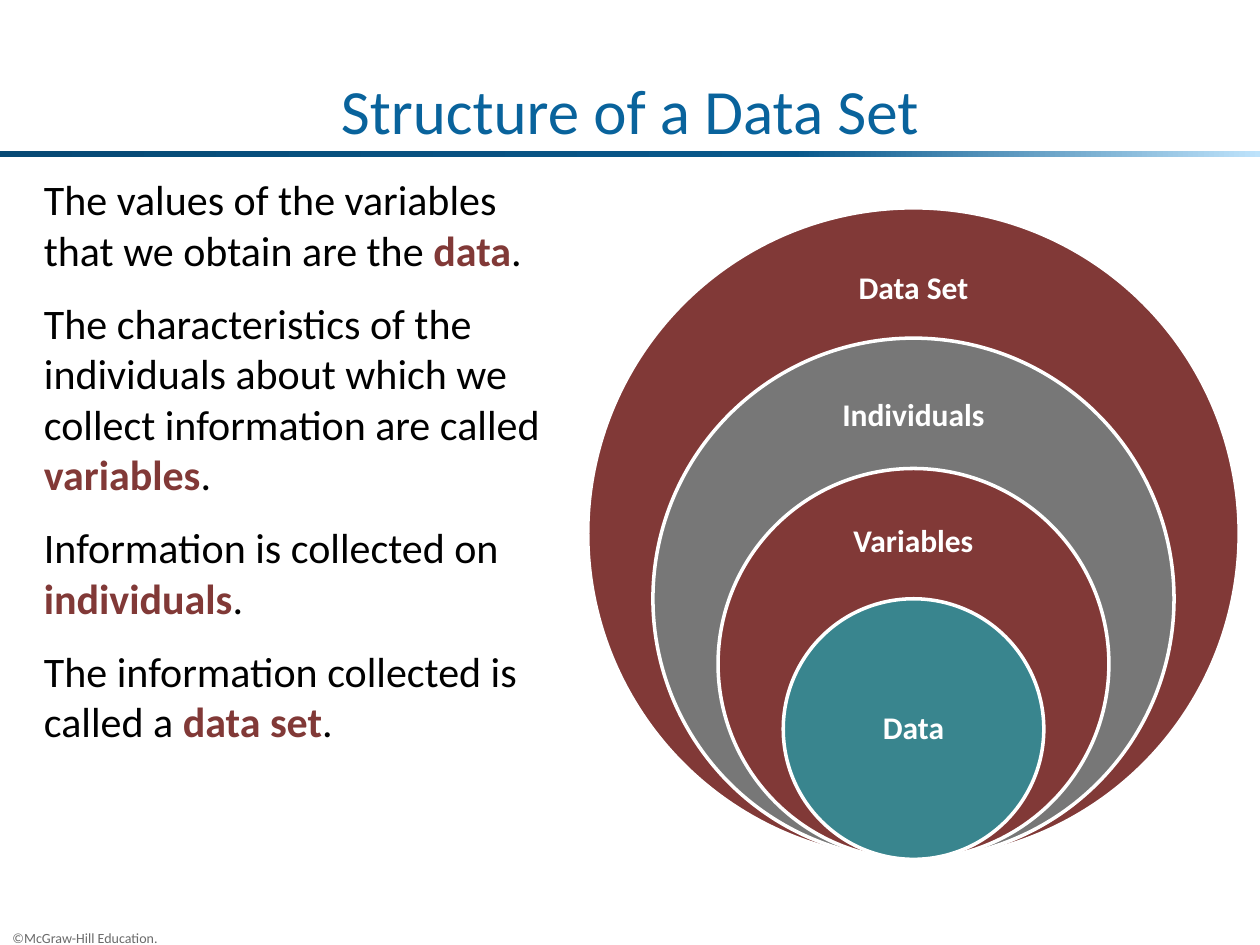
import copy
from dataclasses import dataclass

import pptx
import pptx.dml.color
import pptx.enum.shapes
import pptx.enum.text
import pptx.util

INCH = pptx.util.Inches
ALIGN = pptx.enum.text.PP_ALIGN
ANCHOR = pptx.enum.text.MSO_ANCHOR
SHAPE = pptx.enum.shapes.MSO_SHAPE
WIDE, HIGH = 10, 7.5
FONT = "Calibri"
HUES = {
    "title": "09639C", "text": "000000", "note": "6A6A6A", "white": "FFFFFF",
    "red": "813937", "gray": "777777", "teal": "39858E",
    "navy": "074A75", "blue": "08588B", "sky": "BEE3FB",
}
MID, BASE, SIZE = 7.25, 6.82, 5.17  # shared centre, bottom and largest diameter


@dataclass
class Ring:
    name: str
    hue: str
    scale: float  # share of the largest diameter
    drop: float   # label centre, as a share of this ring's diameter


RINGS = [
    Ring("Data Set", "red", 1, 0.125),
    Ring("Individuals", "gray", 0.8, 0.15),
    Ring("Variables", "red", 0.6, 0.19),
    Ring("Data", "teal", 0.4, 0.5),
]
POINTS = [
    ("The values of the variables that we obtain are the ", "data"),
    ("The characteristics of the individuals about which we collect "
     "information are called ", "variables"),
    ("Information is collected on ", "individuals"),
    ("The information collected is called a ", "data set"),
]


def tint(name: str) -> pptx.dml.color.RGBColor:
    return pptx.dml.color.RGBColor.from_string(HUES[name])


def style(run, size: float, hue: str, bold: bool = False) -> None:
    font = run.font
    font.name, font.size, font.bold = FONT, pptx.util.Pt(size), bold
    font.color.rgb = tint(hue)


def add_box(slide, left: float, top: float, width: float, height: float,
            anchor=ANCHOR.TOP, pad: float = 0.05):
    """Add a wrapping text box and return its text frame."""
    box = slide.shapes.add_textbox(*map(INCH, (left, top, width, height)))
    frame = box.text_frame
    frame.word_wrap = True
    frame.vertical_anchor = anchor
    frame.margin_top = frame.margin_bottom = INCH(pad)
    return frame


def add_line(frame, text: str, size: float, hue: str, bold: bool = False,
             align=ALIGN.LEFT) -> None:
    para = frame.paragraphs[0]
    para.text = text
    para.alignment = align
    style(para.runs[0], size, hue, bold)


def add_bar(slide) -> None:
    """Draw the three-colour rule under the title."""
    bar = slide.shapes.add_shape(
        SHAPE.RECTANGLE, 0, INCH(0.16 * HIGH), INCH(WIDE), INCH(0.05))
    bar.shadow.inherit = False
    bar.line.fill.background()
    bar.fill.gradient()
    bar.fill.gradient_angle = 0
    first = bar.fill.gradient_stops[0]._gs
    first.addnext(copy.deepcopy(first))
    for stop, (place, hue) in zip(
            bar.fill.gradient_stops, [(0, "navy"), (0.63, "blue"), (1, "sky")]):
        stop.position = place
        stop.color.rgb = tint(hue)


def add_points(slide) -> None:
    frame = add_box(slide, 0.25, 1.33, 4.42, 5.81)
    for i, (lead, term) in enumerate(POINTS):
        para = frame.paragraphs[0] if i == 0 else frame.add_paragraph()
        para.space_before = pptx.util.Pt(5 if i else 0)
        para.space_after = pptx.util.Pt(8)
        for text, hue in [(lead, "text"), (term, "red"), (".", "text")]:
            run = para.add_run()
            run.text = text
            style(run, 24, hue, hue == "red")


def add_ring(slide, ring: Ring) -> None:
    size = SIZE * ring.scale
    top = BASE - size
    disc = slide.shapes.add_shape(
        SHAPE.OVAL, *map(INCH, (MID - size / 2, top, size, size)))
    disc.shadow.inherit = False
    disc.fill.solid()
    disc.fill.fore_color.rgb = tint(ring.hue)
    disc.line.color.rgb = tint("white")
    disc.line.width = pptx.util.Pt(2)
    wide, high = 1.44, 0.74
    frame = add_box(slide, MID - wide / 2, top + size * ring.drop - high / 2,
                    wide, high, ANCHOR.MIDDLE, 0.14)
    frame.margin_left = frame.margin_right = INCH(0.14)
    add_line(frame, ring.name, 18, "white", True, ALIGN.CENTER)
    frame.paragraphs[0].line_spacing = 0.9


def main() -> None:
    deck = pptx.Presentation()
    deck.slide_width, deck.slide_height = INCH(WIDE), INCH(HIGH)
    slide = deck.slides.add_slide(deck.slide_layouts[6])
    add_line(add_box(slide, 0, 7.33, 1.5, 0.17),
             "©McGraw-Hill Education.", 8, "note")
    add_bar(slide)
    add_line(add_box(slide, 0, 0.5, WIDE, 0.67, ANCHOR.BOTTOM, 0),
             "Structure of a Data Set", 36, "title", align=ALIGN.CENTER)
    add_points(slide)
    for ring in RINGS:
        add_ring(slide, ring)
    deck.save("out.pptx")


if __name__ == "__main__":
    main()
